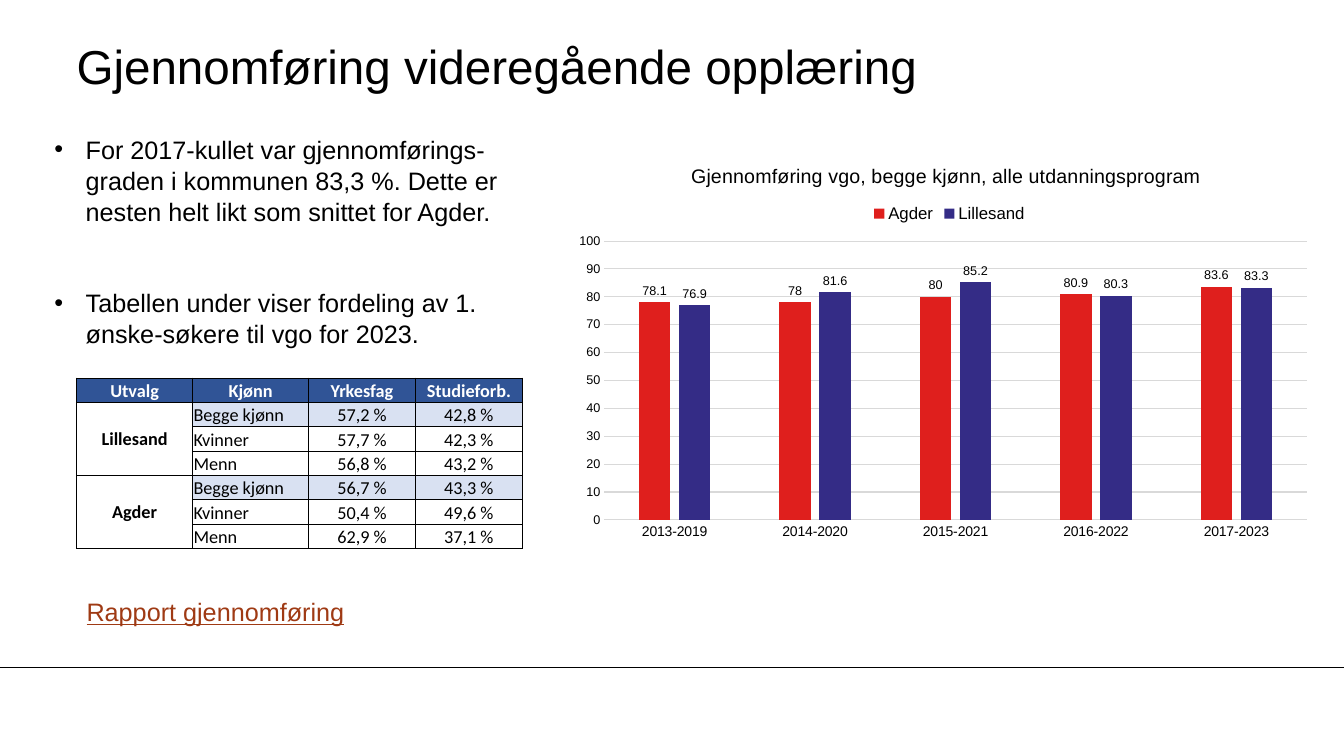
from lxml import etree
from pptx import Presentation
from pptx.chart.data import CategoryChartData
from pptx.dml.color import RGBColor
from pptx.enum.chart import XL_CHART_TYPE, XL_LABEL_POSITION, XL_LEGEND_POSITION, XL_TICK_MARK
from pptx.enum.shapes import MSO_CONNECTOR
from pptx.enum.text import MSO_ANCHOR, MSO_AUTO_SIZE, PP_ALIGN
from pptx.oxml import parse_xml
from pptx.oxml.ns import nsdecls, qn
from pptx.util import Inches, Pt

BLACK = RGBColor(0x00, 0x00, 0x00)
WHITE = RGBColor(0xFF, 0xFF, 0xFF)
NAVY = RGBColor(0x30, 0x54, 0x96)
PALE = RGBColor(0xD9, 0xE1, 0xF2)
RUST = RGBColor(0x9F, 0x3A, 0x14)
RED = RGBColor(0xDF, 0x1F, 0x1D)
INDIGO = RGBColor(0x34, 0x2C, 0x86)
GREY = RGBColor(0xD9, 0xD9, 0xD9)
LEFT, CENTER = PP_ALIGN.LEFT, PP_ALIGN.CENTER
MIDDLE, BOTTOM = MSO_ANCHOR.MIDDLE, MSO_ANCHOR.BOTTOM
NONE = XL_TICK_MARK.NONE
EDGE = Inches(0.76)


def style(font, size, color=BLACK, name="Arial", bold=False):
    font.size, font.name, font.bold = Pt(size), name, bold
    font.color.rgb = color


def place(part, **shares):
    """Set a chart part's position as shares of the chart's size."""
    for old in part.findall(qn("c:layout")):
        part.remove(old)
    inner = '<c:layoutTarget val="inner"/>' if "w" in shares else ""
    modes = "".join(f'<c:{k}Mode val="edge"/>' for k in "xy")
    sizes = "".join(f'<c:{k} val="{v}"/>' for k, v in shares.items())
    layout = parse_xml(f'<c:layout {nsdecls("c")}><c:manualLayout>{inner}{modes}{sizes}'
                       '</c:manualLayout></c:layout>')
    before = part.find(qn("c:tx"))
    if before is None:
        before = part.find(qn("c:legendPos"))
    if before is None:
        part.insert(0, layout)
    else:
        before.addnext(layout)


prs = Presentation()
prs.slide_width, prs.slide_height = Inches(13.33), Inches(7.5)
slide = prs.slides.add_slide(prs.slide_layouts[1])
shapes = slide.shapes
title, body = slide.placeholders

# Footer rule
rule = shapes.add_connector(MSO_CONNECTOR.STRAIGHT, 0, Inches(6.62), prs.slide_width, Inches(6.62))
rule.line.color.rgb, rule.line.width = BLACK, Pt(0.75)
etree.SubElement(rule._element.spPr, qn("a:effectLst"))

# Title
title.left, title.top, title.width, title.height = EDGE, Inches(0.27), Inches(11.1), Inches(0.75)
frame = title.text_frame
frame.auto_size = MSO_AUTO_SIZE.NONE
frame.vertical_anchor = MIDDLE
frame.margin_left = frame.margin_right = frame.margin_top = frame.margin_bottom = 0
para = frame.paragraphs[0]
para.alignment = LEFT
run = para.add_run()
run.text = "Gjennomføring videregående opplæring"
style(run.font, 34)

# Bullet list
body.left, body.top, body.width, body.height = Inches(0.44), Inches(1.27), Inches(5.1), Inches(2.22)
frame = body.text_frame
frame.auto_size = MSO_AUTO_SIZE.NONE
points = [
    ("For 2017-kullet var gjennomførings-graden i kommunen 83,3 %. "
     "Dette er nesten helt likt som snittet for Agder.", 0),
    ("Tabellen under viser fordeling av 1. ønske-søkere til vgo for 2023.", 43),
]
for i, (text, gap) in enumerate(points):
    para = frame.add_paragraph() if i else frame.paragraphs[0]
    props = para._p.get_or_add_pPr()
    props.set("marL", str(Inches(0.31)))
    props.set("indent", str(-Inches(0.31)))
    etree.SubElement(props, qn("a:buFont")).set("typeface", "Arial")
    etree.SubElement(props, qn("a:buChar")).set("char", "•")
    para.space_before, para.line_spacing = Pt(gap), 1.03
    run = para.add_run()
    run.text = text
    style(run.font, 18)

# Table of first choices
rows = [
    ("Utvalg", "Kjønn", "Yrkesfag", "Studieforb."),
    ("Lillesand", "Begge kjønn", "57,2 %", "42,8 %"),
    ("", "Kvinner", "57,7 %", "42,3 %"),
    ("", "Menn", "56,8 %", "43,2 %"),
    ("Agder", "Begge kjønn", "56,7 %", "43,3 %"),
    ("", "Kvinner", "50,4 %", "49,6 %"),
    ("", "Menn", "62,9 %", "37,1 %"),
]
table = shapes.add_table(7, 4, EDGE, Inches(3.75), Inches(4.42), Inches(1.69)).table
for col, width in zip(table.columns, (1.15, 1.15, 1.06, 1.06)):
    col.width = Inches(width)
for r, row in enumerate(rows):
    table.rows[r].height = Inches(1.69 / 7)
    for c, text in enumerate(row):
        cell = table.cell(r, c)
        head, group = r == 0, r > 0 and c == 0
        cell.margin_left = cell.margin_right = cell.margin_top = Inches(0.01)
        cell.margin_bottom = 0
        cell.vertical_anchor = MIDDLE if group else BOTTOM
        for side in ("lnL", "lnR", "lnT", "lnB"):
            cell._tc.get_or_add_tcPr().append(parse_xml(
                f'<a:{side} {nsdecls("a")} w="6350"><a:solidFill><a:srgbClr val="{BLACK}"/>'
                f'</a:solidFill></a:{side}>'))
        cell.fill.solid()
        cell.fill.fore_color.rgb = NAVY if head else PALE if c and r in (1, 4) else WHITE
        para = cell.text_frame.paragraphs[0]
        para.alignment = LEFT if c == 1 and not head else CENTER
        style(para.font, 13, name="Calibri")
        if text:
            run = para.add_run()
            run.text = text
            style(run.font, 13, WHITE if head else BLACK, "Calibri", head or group)
for top in (1, 4):
    table.cell(top, 0).merge(table.cell(top + 2, 0))

# Report label
box = shapes.add_textbox(EDGE, Inches(5.87), Inches(2.81), Inches(0.4))
box.text_frame.word_wrap = True
run = box.text_frame.paragraphs[0].add_run()
run.text = "Rapport gjennomføring"
style(run.font, 18, RUST)
run.font.underline = True

# Column chart
data = CategoryChartData(number_format="General")
data.categories = ["2013-2019", "2014-2020", "2015-2021", "2016-2022", "2017-2023"]
data.add_series("Agder", (78.1, 78, 80, 80.9, 83.6))
data.add_series("Lillesand", (76.9, 81.6, 85.2, 80.3, 83.3))
chart = shapes.add_chart(XL_CHART_TYPE.COLUMN_CLUSTERED, Inches(5.62), Inches(1.43),
                         Inches(7.49), Inches(4.01), data).chart
style(chart.font, 10)
chart.has_title = True
run = chart.chart_title.text_frame.paragraphs[0].add_run()
run.text = "Gjennomføring vgo, begge kjønn, alle utdanningsprogram"
style(run.font, 14)
chart.has_legend = True
chart.legend.position = XL_LEGEND_POSITION.TOP
chart.legend.include_in_layout = False
style(chart.legend.font, 12)

plot = chart.plots[0]
plot.gap_width, plot.overlap, plot.vary_by_categories = 219, -27, False
for series, color in zip(plot.series, (RED, INDIGO)):
    series.format.fill.solid()
    series.format.fill.fore_color.rgb = color
    labels = series.data_labels
    labels.show_value = True
    labels.position = XL_LABEL_POSITION.OUTSIDE_END
    style(labels.font, 9)

# Axes
cats, vals = chart.category_axis, chart.value_axis
for axis, size in ((cats, 10), (vals, 9)):
    axis.major_tick_mark = axis.minor_tick_mark = NONE
    style(axis.tick_labels.font, size)
vals.minimum_scale, vals.maximum_scale, vals.major_unit = 0, 100, 10
vals.tick_labels.number_format = "#,##0"
vals.tick_labels.number_format_is_linked = False
vals.format.line.fill.background()
for line in (cats.format.line, vals.major_gridlines.format.line):
    line.color.rgb, line.width = GREY, Pt(0.75)

# Chart parts
space = chart._chartSpace.chart
place(space.find(qn("c:title")), x=0.16, y=0.04)
place(space.find(qn("c:legend")), x=0.4, y=0.14)
place(space.plotArea, x=0.05, y=0.24, w=0.93, h=0.69)

prs.save("out.pptx")
